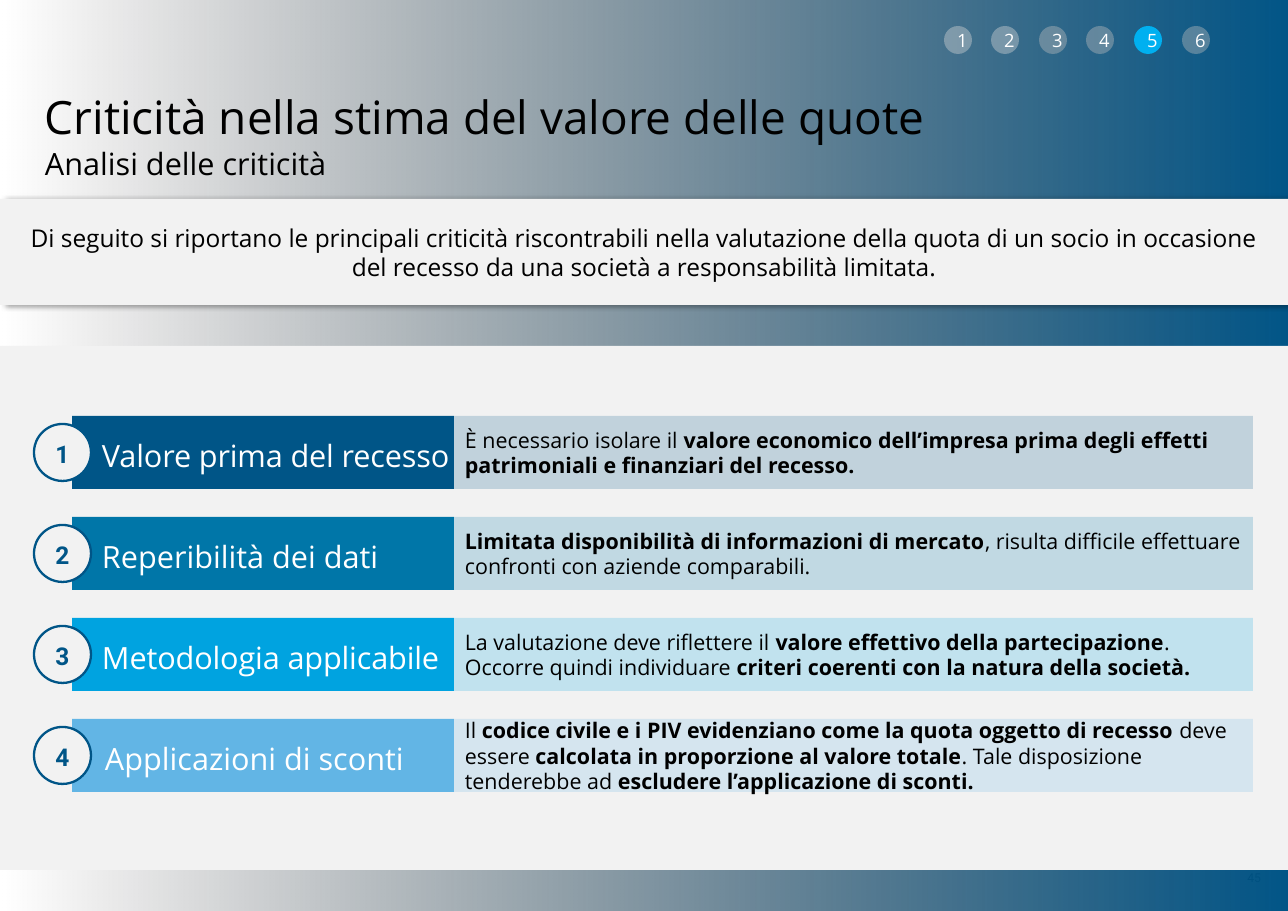
from lxml.etree import SubElement
from pptx import Presentation
from pptx.dml.color import RGBColor
from pptx.enum.shapes import MSO_SHAPE as Shape
from pptx.enum.text import MSO_ANCHOR as Anchor, MSO_AUTO_SIZE as AutoSize, PP_ALIGN as Align
from pptx.oxml.ns import qn
from pptx.util import Pt

PX = 8298
BLACK = RGBColor(0x00, 0x00, 0x00)
WHITE = RGBColor(0xFF, 0xFF, 0xFF)
NAVY = RGBColor(0x00, 0x55, 0x87)
TEAL = RGBColor(0x00, 0x76, 0xA8)
CYAN = RGBColor(0x00, 0xA3, 0xE0)
SKY = RGBColor(0x62, 0xB5, 0xE5)
ACTIVE = RGBColor(0x00, 0xB0, 0xF0)
PALE = RGBColor(0xF2, 0xF2, 0xF2)
LIGHT_GREY = RGBColor(0xD9, 0xD9, 0xD9)
MID_GREY = RGBColor(0xBF, 0xBF, 0xBF)

TITLE = {"name": "Open Sans", "size": Pt(30)}
HEADING = {"name": "Open Sans", "size": Pt(20)}
INTRO = {"name": "Open Sans", "size": Pt(16)}
DETAIL = {"name": "Open Sans", "size": Pt(14)}
STEP = {"name": "Open Sans", "size": Pt(12)}
BADGE = {"name": "Roboto", "size": Pt(16), "bold": True}
FOLIO = {"name": "Roboto", "size": Pt(8)}
TIGHT = {"margin_left": 0, "margin_right": 0, "margin_top": PX, "margin_bottom": 0,
         "vertical_anchor": Anchor.TOP}
MIDDLE = {"vertical_anchor": Anchor.MIDDLE}

INTRO_TEXT = ("Di seguito si riportano le principali criticità riscontrabili nella valutazione della "
              "quota di un socio in occasione del recesso da una società a responsabilità limitata.")
ISSUES = [
    ("Valore prima del recesso", NAVY, 0, -10,
     "È necessario isolare il *valore economico dell’impresa prima degli effetti "
     "patrimoniali e finanziari del recesso."),
    ("Reperibilità dei dati", TEAL, 0, 0,
     "*Limitata disponibilità di informazioni di mercato*, risulta difficile effettuare "
     "confronti con aziende comparabili."),
    ("Metodologia applicabile", CYAN, 0, -10,
     "La valutazione deve riflettere il *valore effettivo della partecipazione*. "
     "Occorre quindi individuare *criteri coerenti con la natura della società."),
    ("Applicazioni di sconti", SKY, 3, 0,
     "Il *codice civile e i PIV evidenziano come la quota oggetto di recesso *deve essere "
     "*calcolata in proporzione al valore totale*. Tale disposizione tenderebbe ad "
     "*escludere l’applicazione di sconti."),
]
STEP_COLOURS = [LIGHT_GREY, LIGHT_GREY, MID_GREY, MID_GREY, ACTIVE, MID_GREY]


def assign(target, values):
    """Set every attribute in the dict on the target."""
    for name, value in values.items():
        setattr(target, name, value)


def emu(box):
    """Turn a box in px into EMU lengths."""
    return [length * PX for length in box]


def set_alpha(shape, percent):
    """Set the opacity of the first colour of the shape."""
    colour = next(shape.element.spPr.iter(qn("a:srgbClr")))
    SubElement(colour, qn("a:alpha")).set("val", str(percent * 1000))


def add_block(page, box, colour, kind=Shape.RECTANGLE, alpha=100):
    """Add a filled shape without outline."""
    shape = page.shapes.add_shape(kind, *emu(box))
    shape.shadow.inherit = False
    shape.fill.solid()
    shape.fill.fore_color.rgb = colour
    shape.line.fill.background()
    if alpha < 100:
        set_alpha(shape, alpha)
    return shape


def write(shape, text, style, colour, align=Align.LEFT, frame_format=MIDDLE, spacing=0):
    """Write one paragraph in which asterisks switch bold on and off."""
    frame = shape.text_frame
    assign(frame, {"word_wrap": True, "auto_size": AutoSize.NONE} | frame_format)
    para = frame.paragraphs[0]
    para.alignment = align
    for index, part in enumerate(text.split("*")):
        if part:
            span = para.add_run()
            span.text = part
            assign(span.font, {"bold": index % 2 == 1} | style)
            span.font.color.rgb = colour
            if spacing:
                span.font._element.set("spc", str(spacing))
    return para


def add_label(page, box, text, style, colour, **options):
    """Add a text box holding one paragraph."""
    return write(page.shapes.add_textbox(*emu(box)), text, style, colour, **options)


def draw_backdrop(page, box):
    """Draw the page number, the gradient and the content panel."""
    left, top, width, height = box
    add_label(page, (left + width - 90, top + height - 46, 74, 26), "45", FOLIO, BLACK,
              align=Align.RIGHT)
    backdrop = add_block(page, box, NAVY)
    backdrop.fill.gradient()
    backdrop.fill.gradient_angle = 0
    for stop, colour in zip(backdrop.fill.gradient_stops, (BLACK, NAVY)):
        stop.color.rgb = colour
    set_alpha(backdrop, 0)
    add_block(page, (left, top + 346, width, 524), PALE)


def draw_heading(page, box):
    """Place the title and the subtitle."""
    left, top, width, height = box
    title = page.shapes.title
    title.element.getparent().append(title.element)
    assign(title, dict(zip(("left", "top", "width", "height"), emu((left, top, width, 57)))))
    write(title, "Criticità nella stima del valore delle quote", TITLE, BLACK, frame_format=TIGHT)
    add_label(page, (left, top + 56, width, height - 56), "Analisi delle criticità", HEADING, BLACK,
              frame_format=TIGHT)


def draw_intro(page, box):
    """Draw the shadowed band with the introduction."""
    band = add_block(page, box, PALE)
    effects = band.element.spPr.find(qn("a:effectLst"))
    shadow = SubElement(effects, qn("a:outerShdw"), blurRad="50800", dist="38100", dir="0",
                        algn="l", rotWithShape="0")
    colour = SubElement(shadow, qn("a:srgbClr"), val="000000")
    SubElement(colour, qn("a:alpha"), val="40000")
    write(band, INTRO_TEXT, INTRO, BLACK, align=Align.CENTER)


def draw_issue(page, box, number, issue):
    """Draw one numbered issue with its heading and detail."""
    left, top, width, height = box
    name, colour, indent, spacing, text = issue
    detail = add_block(page, (left + 420, top, width - 420, height), colour, alpha=20)
    write(detail, text, DETAIL, BLACK)
    add_block(page, (left + 38, top, 382, height), colour)
    add_label(page, (left + 68 + indent, top + 20, 378, 39), name, HEADING, WHITE,
              frame_format=TIGHT, spacing=spacing)
    badge = add_block(page, (left, top + 8, 57, 57), PALE, Shape.OVAL)
    badge.line.color.rgb = NAVY
    badge.line.width = Pt(1.5)
    write(badge, str(number), BADGE, NAVY, align=Align.CENTER).line_spacing = 1.06


def draw_steps(page, box):
    """Draw the row of numbered section dots."""
    left, top, width, size = box
    last = len(STEP_COLOURS) - 1
    for index, colour in enumerate(STEP_COLOURS):
        place = (left + (width - size) * index // last, top, size, size)
        dot = add_block(page, place, colour, Shape.OVAL, 100 if colour == ACTIVE else 40)
        write(dot, str(index + 1), STEP, WHITE, align=Align.CENTER)


def main():
    """Build and save the deck."""
    deck = Presentation()
    deck.slide_width, deck.slide_height = emu((1288, 911))
    page = deck.slides.add_slide(deck.slide_layouts[5])
    draw_backdrop(page, (0, 0, 1288, 911))
    draw_heading(page, (45, 88, 1230, 95))
    draw_intro(page, (0, 199, 1288, 106))
    for index, issue in enumerate(ISSUES):
        draw_issue(page, (34, 416 + 101 * index, 1219, 73), index + 1, issue)
    draw_steps(page, (944, 26, 266, 28))
    deck.save("out.pptx")


if __name__ == "__main__":
    main()
